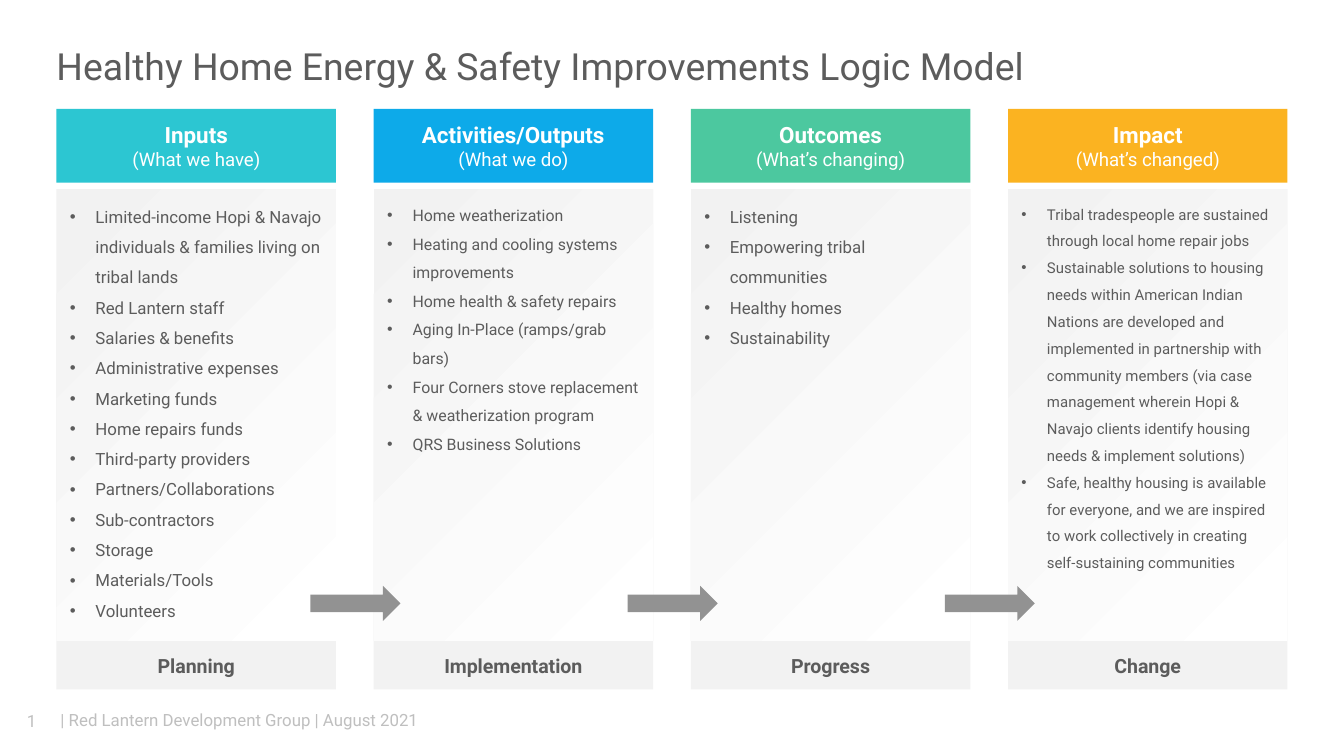
"""Build the Healthy Home Energy & Safety Improvements logic model slide."""
from dataclasses import dataclass

from lxml import etree
from pptx import Presentation
from pptx.dml.color import RGBColor
from pptx.enum.shapes import MSO_SHAPE
from pptx.enum.text import MSO_ANCHOR, MSO_AUTO_SIZE, PP_ALIGN
from pptx.oxml.ns import qn
from pptx.util import Inches, Pt

RECTANGLE = MSO_SHAPE.RECTANGLE
RIGHT_ARROW = MSO_SHAPE.RIGHT_ARROW
TOP, MIDDLE = MSO_ANCHOR.TOP, MSO_ANCHOR.MIDDLE
LEFT, CENTER = PP_ALIGN.LEFT, PP_ALIGN.CENTER
NO_AUTOFIT = MSO_AUTO_SIZE.NONE

FONT = "Roboto"
WHITE = RGBColor(0xFF, 0xFF, 0xFF)
PALE_GRAY = RGBColor(0xF2, 0xF2, 0xF2)
FOOTER_GRAY = RGBColor(0xBF, 0xBF, 0xBF)
ARROW_GRAY = RGBColor(0x92, 0x92, 0x92)
TEXT_GRAY = RGBColor(0x5C, 0x5C, 0x5C)
TEAL = RGBColor(0x2C, 0xC6, 0xD2)
BLUE = RGBColor(0x0D, 0xAA, 0xE9)
GREEN = RGBColor(0x4C, 0xC8, 0x9F)
AMBER = RGBColor(0xFB, 0xB3, 0x21)

COMPARISON_LAYOUT = 4
SLIDE_WIDTH = Inches(10)
SLIDE_HEIGHT = SLIDE_WIDTH * 9 // 16
FIRST_LEFT, PITCH, COLUMN_WIDTH = 0.42, 2.36, 2.08
ARROW_OFFSET = 1.89
LIST_INDENT = 0.19


@dataclass(frozen=True)
class Stage:
    heading: str
    question: str
    color: RGBColor
    phase: str
    size: float
    items: tuple[str, ...]


STAGES = (
    Stage("Inputs", "(What we have)", TEAL, "Planning", 9, (
        "Limited-income Hopi & Navajo individuals & families living on tribal lands",
        "Red Lantern staff",
        "Salaries & benefits",
        "Administrative expenses",
        "Marketing funds",
        "Home repairs funds",
        "Third-party providers",
        "Partners/Collaborations",
        "Sub-contractors",
        "Storage",
        "Materials/Tools",
        "Volunteers",
    )),
    Stage("Activities/Outputs", "(What we do)", BLUE, "Implementation", 8.5, (
        "Home weatherization",
        "Heating and cooling systems improvements",
        "Home health & safety repairs",
        "Aging In-Place (ramps/grab bars)",
        "Four Corners stove replacement & weatherization program",
        "QRS Business Solutions",
    )),
    Stage("Outcomes", "(What’s changing)", GREEN, "Progress", 9, (
        "Listening",
        "Empowering tribal communities",
        "Healthy homes",
        "Sustainability",
    )),
    Stage("Impact", "(What’s changed)", AMBER, "Change", 8, (
        "Tribal tradespeople are sustained through local home repair jobs",
        "Sustainable solutions to housing needs within American Indian Nations are "
        "developed and implemented in partnership with community members (via case "
        "management wherein Hopi & Navajo clients identify housing needs & implement "
        "solutions)",
        "Safe, healthy housing is available for everyone, and we are inspired to work "
        "collectively in creating self-sustaining communities",
    )),
)


def place(shape, left: float, top: float, width: float, height: float) -> None:
    """Move and size a placeholder."""
    shape.left, shape.top = Inches(left), Inches(top)
    shape.width, shape.height = Inches(width), Inches(height)


def add_run(paragraph, text: str, size: float, color: RGBColor, bold: bool = False) -> None:
    """Append one formatted run."""
    run = paragraph.add_run()
    run.text = text
    run.font.name, run.font.size, run.font.bold = FONT, Pt(size), bold
    run.font.color.rgb = color


def prepare_frame(shape, anchor, inset: bool = True):
    """Set wrapping, anchor and margins, and return the text frame."""
    frame = shape.text_frame
    frame.word_wrap, frame.auto_size = True, NO_AUTOFIT
    frame.vertical_anchor = anchor
    frame.margin_left = frame.margin_right = Inches(0.1 if inset else 0)
    frame.margin_top = frame.margin_bottom = Inches(0.05 if inset else 0)
    return frame


def add_block(slide, kind, left: float, top: float, width: float, height: float,
              color: RGBColor):
    """Add a flat shape and return its centred first paragraph."""
    block = slide.shapes.add_shape(
        kind, Inches(left), Inches(top), Inches(width), Inches(height))
    block.shadow.inherit = False
    block.fill.solid()
    block.fill.fore_color.rgb = color
    block.line.fill.background()
    paragraph = prepare_frame(block, MIDDLE).paragraphs[0]
    paragraph.alignment = CENTER
    return paragraph


def add_footer(slide, text: str, left: float, top: float, width: float, height: float,
               alignment, inset: bool) -> None:
    """Add one piece of the footer line."""
    footer = slide.shapes.add_textbox(
        Inches(left), Inches(top), Inches(width), Inches(height))
    paragraph = prepare_frame(footer, MIDDLE, inset).paragraphs[0]
    paragraph.alignment = alignment
    add_run(paragraph, text, 9, FOOTER_GRAY)


def fill_from_corner(shape) -> None:
    """Shade a shape from white at its bottom right corner to pale gray."""
    shape.fill.gradient()
    for stop, position, color in zip(shape.fill.gradient_stops, (0, 1), (WHITE, PALE_GRAY)):
        stop.position, stop.color.rgb = position, color
    gradient = shape._element.spPr.find(qn("a:gradFill"))
    linear = gradient.find(qn("a:lin"))
    circle = etree.Element(qn("a:path"), path="circle")
    etree.SubElement(circle, qn("a:fillToRect"), l="100000", t="100000")
    gradient.replace(linear, circle)


def fill_list(body, stage: Stage, left: float) -> None:
    """Place a body placeholder and write the bulleted items of a stage."""
    place(body, left, 1.41, COLUMN_WIDTH, 3.36)
    fill_from_corner(body)
    frame = prepare_frame(body, TOP)
    for index, item in enumerate(stage.items):
        paragraph = frame.add_paragraph() if index else frame.paragraphs[0]
        properties = paragraph._p.get_or_add_pPr()
        properties.set("marL", str(Inches(LIST_INDENT)))
        properties.set("indent", str(-Inches(LIST_INDENT)))
        etree.SubElement(properties, qn("a:buChar"), char="•")
        paragraph.alignment, paragraph.line_spacing = LEFT, 1.5
        paragraph.space_before = paragraph.space_after = Pt(0)
        add_run(paragraph, item, stage.size, TEXT_GRAY)


def add_stage(slide, body, stage: Stage, left: float) -> None:
    """Draw one column: heading, list and phase."""
    heading = add_block(slide, RECTANGLE, left, 0.81, COLUMN_WIDTH, 0.55, stage.color)
    add_run(heading, stage.heading, 12, WHITE, bold=True)
    heading.add_line_break()
    add_run(heading, stage.question, 10, WHITE)
    fill_list(body, stage, left)
    phase = add_block(slide, RECTANGLE, left, 4.77, COLUMN_WIDTH, 0.36, PALE_GRAY)
    add_run(phase, stage.phase, 10.5, TEXT_GRAY, bold=True)


def main() -> None:
    """Build and save the slide."""
    deck = Presentation()
    deck.slide_width, deck.slide_height = SLIDE_WIDTH, SLIDE_HEIGHT
    slide = deck.slides.add_slide(deck.slide_layouts[COMPARISON_LAYOUT])

    title = slide.shapes.title
    place(title, FIRST_LEFT, 0.31, 9.15, 0.36)
    headline = prepare_frame(title, MIDDLE, inset=False).paragraphs[0]
    headline.alignment = LEFT
    add_run(headline, "Healthy Home Energy & Safety Improvements Logic Model", 20, TEXT_GRAY)

    bodies = list(slide.placeholders)[1:]
    lefts = [FIRST_LEFT + PITCH * column for column in range(len(STAGES))]
    for body, stage, left in zip(bodies, STAGES, lefts):
        add_stage(slide, body, stage, left)
    for left in lefts[:-1]:
        add_block(slide, RIGHT_ARROW, left + ARROW_OFFSET, 4.36, 0.67, 0.26, ARROW_GRAY)

    add_footer(slide, "1", 0.02, 5.21, 0.43, 0.3, CENTER, inset=True)
    add_footer(slide, "| Red Lantern Development Group | August 2021",
               0.45, 5.28, 2.72, 0.15, LEFT, inset=False)
    deck.save("out.pptx")


if __name__ == "__main__":
    main()
